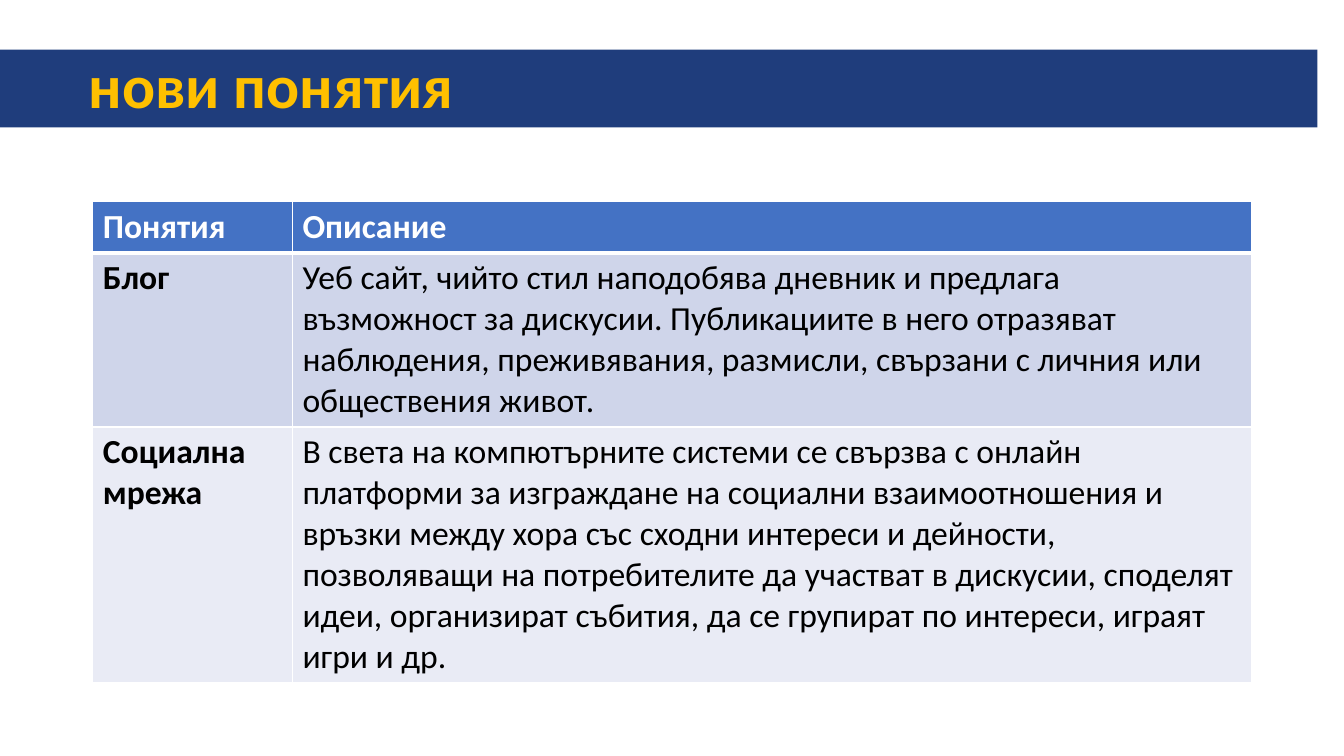
from lxml.etree import SubElement
from pptx import Presentation
from pptx.dml.color import RGBColor
from pptx.enum.text import MSO_ANCHOR, MSO_AUTO_SIZE, PP_ALIGN
from pptx.oxml.ns import qn
from pptx.util import Cm, Pt

NAVY = RGBColor(0x1F, 0x3D, 0x7C)
GOLD = RGBColor(0xFF, 0xC0, 0x00)
BLUE = RGBColor(0x44, 0x72, 0xC4)
BAND_DARK = RGBColor(0xCF, 0xD5, 0xEA)
BAND_LIGHT = RGBColor(0xE9, 0xEB, 0xF5)
WHITE = RGBColor(0xFF, 0xFF, 0xFF)
BLACK = RGBColor(0, 0, 0)


def add_border(cell, side, width):
    ln = SubElement(cell._tc.get_or_add_tcPr(), qn(f"a:{side}"), w=str(Pt(width)))
    fill = SubElement(ln, qn("a:solidFill"))
    SubElement(fill, qn("a:srgbClr"), val=str(WHITE))


def format_runs(tf, size, color, bold):
    for p in tf.paragraphs:
        for r in p.runs:
            r.font.name = "Calibri"
            r.font.size = Pt(size)
            r.font.bold = bold
            r.font.color.rgb = color


prs = Presentation()
prs.slide_width = Cm(33.87)
prs.slide_height = Cm(19.05)
s = prs.slides.add_slide(prs.slide_layouts[5])

title = s.shapes.title
title.left, title.top, title.width, title.height = Cm(0), Cm(1.25), Cm(33.2), Cm(1.96)
title.fill.solid()
title.fill.fore_color.rgb = NAVY
tf = title.text_frame
tf.text = "нови понятия"
tf.auto_size = MSO_AUTO_SIZE.NONE
tf.vertical_anchor = MSO_ANCHOR.MIDDLE
p = tf.paragraphs[0]
p.alignment = PP_ALIGN.LEFT
p.line_spacing = 0.9
p._p.get_or_add_pPr().set("marL", str(Cm(1.98)))
format_runs(tf, 44, GOLD, True)

rows = [
    ("Понятия", "Описание"),
    ("Блог", "Уеб сайт, чийто стил наподобява дневник и предлага възможност за "
             "дискусии. Публикациите в него отразяват наблюдения, преживявания, "
             "размисли, свързани с личния или обществения живот."),
    ("Социална\nмрежа", "В света на компютърните системи се свързва с онлайн платформи "
                        "за изграждане на социални взаимоотношения и връзки между хора "
                        "със сходни интереси и дейности, позволяващи на потребителите "
                        "да участват в дискусии, споделят идеи, организират събития, "
                        "да се групират по интереси, играят игри и др."),
]
fills = [BLUE, BAND_DARK, BAND_LIGHT]
heights = [1.27, 4.39, 6.45]
widths = [5.03, 24.18]

table = s.shapes.add_table(3, 2, Cm(2.34), Cm(5.08), Cm(sum(widths)), Cm(sum(heights))).table
for col, width in zip(table.columns, widths):
    col.width = Cm(width)
for i, texts in enumerate(rows):
    table.rows[i].height = Cm(heights[i])
    for j, text in enumerate(texts):
        cell = table.cell(i, j)
        cell.text = text
        format_runs(cell.text_frame, 24, WHITE if i == 0 else BLACK, i == 0 or j == 0)
        add_border(cell, "lnL", 1)
        add_border(cell, "lnR", 1)
        add_border(cell, "lnT", 3 if i == 1 else 1)
        add_border(cell, "lnB", 3 if i == 0 else 1)
        cell.fill.solid()
        cell.fill.fore_color.rgb = fills[i]

prs.save("out.pptx")
